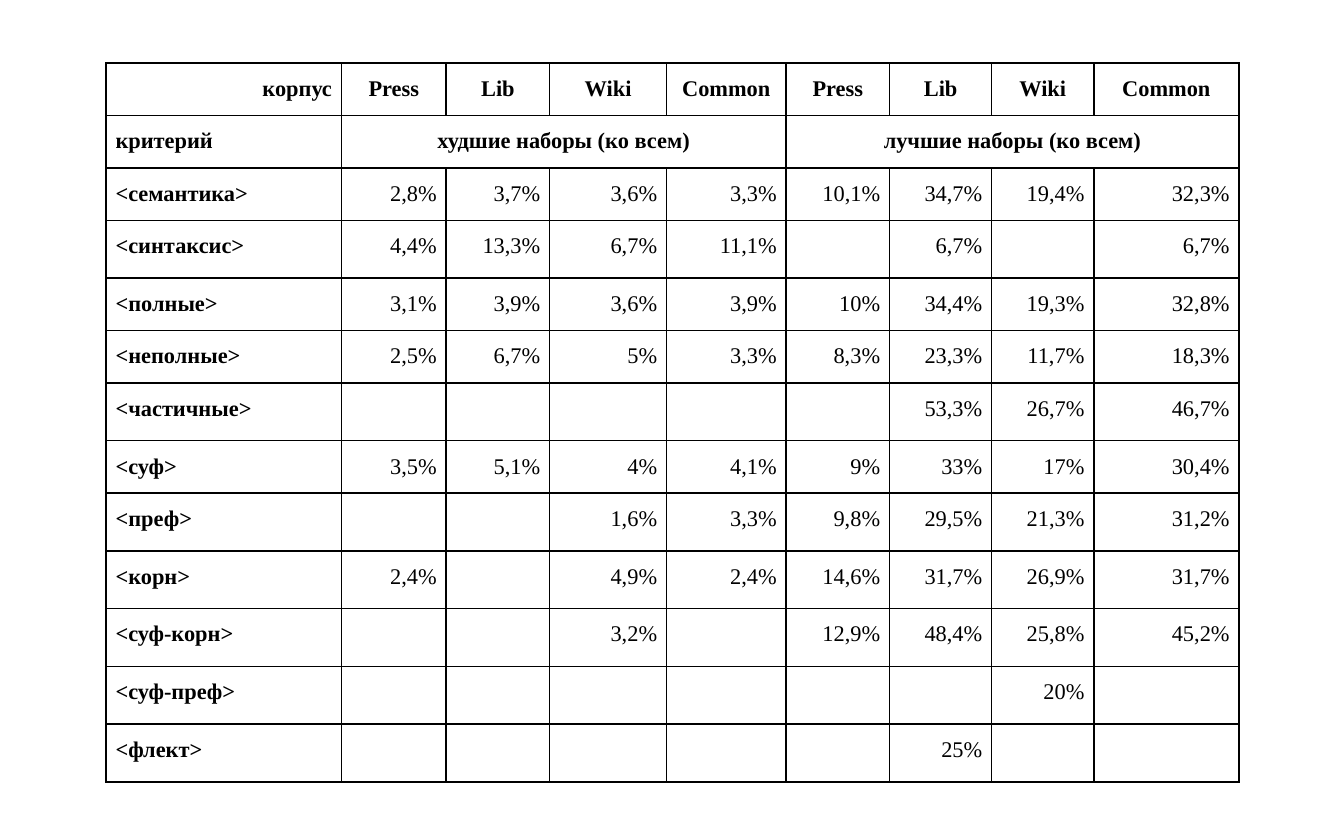
import dataclasses

import pptx
import pptx.enum.text
import pptx.oxml
import pptx.oxml.ns
import pptx.table
import pptx.util
from pptx.util import Inches

ALIGN = pptx.enum.text.PP_ALIGN
COLORS = {"ink": "000000"}
FONT = "Times New Roman"
LEFT, TOP = 0.79, 0.47
WIDTHS = [1.75, 0.78, 0.77, 0.87, 0.89, 0.77, 0.76, 0.76, 1.08]
SHORT, TALL = 0.39, 0.43
CORPORA = ["Press", "Lib", "Wiki", "Common"]
GROUPS = ["худшие наборы (ко всем)", "лучшие наборы (ко всем)"]


@dataclasses.dataclass
class Row:
    name: str
    values: list[str]
    slanted: bool = False  # opening bracket in italics

    @property
    def height(self) -> float:
        return SHORT if all(self.values) else TALL


ROWS = [
    Row("семантика", ["2,8%", "3,7%", "3,6%", "3,3%", "10,1%", "34,7%", "19,4%", "32,3%"]),
    Row("синтаксис", ["4,4%", "13,3%", "6,7%", "11,1%", "", "6,7%", "", "6,7%"]),
    Row("полные", ["3,1%", "3,9%", "3,6%", "3,9%", "10%", "34,4%", "19,3%", "32,8%"], True),
    Row("неполные", ["2,5%", "6,7%", "5%", "3,3%", "8,3%", "23,3%", "11,7%", "18,3%"], True),
    Row("частичные", ["", "", "", "", "", "53,3%", "26,7%", "46,7%"], True),
    Row("суф", ["3,5%", "5,1%", "4%", "4,1%", "9%", "33%", "17%", "30,4%"], True),
    Row("преф", ["", "", "1,6%", "3,3%", "9,8%", "29,5%", "21,3%", "31,2%"], True),
    Row("корн", ["2,4%", "", "4,9%", "2,4%", "14,6%", "31,7%", "26,9%", "31,7%"], True),
    Row("суф-корн", ["", "", "3,2%", "", "12,9%", "48,4%", "25,8%", "45,2%"]),
    Row("суф-преф", ["", "", "", "", "", "", "20%", ""]),
    Row("флект", ["", "", "", "", "", "25%", "", ""]),
]


def frame_cell(cell: pptx.table._Cell) -> None:
    """Give a cell thin borders and no fill."""
    props = cell._tc.get_or_add_tcPr()
    for side in ("lnL", "lnR", "lnT", "lnB"):
        props.append(pptx.oxml.parse_xml(
            f'<a:{side} {pptx.oxml.ns.nsdecls("a")} w="{pptx.util.Pt(1)}"><a:solidFill>'
            f'<a:srgbClr val="{COLORS["ink"]}"/></a:solidFill></a:{side}>'))
    cell.fill.background()


def write_cell(cell: pptx.table._Cell, text: str, align: ALIGN,
               bold: bool = True, slanted: bool = False) -> None:
    """Write a cell; a slanted one sets its first letter in italics."""
    cell.margin_left = cell.margin_right = Inches(0.07)
    cell.margin_top = cell.margin_bottom = Inches(0.1)
    line = cell.text_frame.paragraphs[0]
    line.text = text[:1] if slanted else text
    line.alignment = align
    if slanted:
        line.runs[0].font.italic = True
        line.add_run().text = text[1:]
    for run in line.runs:
        run.font.name = FONT
        run.font.size = pptx.util.Pt(12)
        run.font.bold = bold
        run.font.color.rgb = pptx.dml.color.RGBColor.from_string(COLORS["ink"])


def add_grid(slide: pptx.slide.Slide) -> pptx.table.Table:
    """Add the empty framed table."""
    heights = [SHORT, SHORT] + [row.height for row in ROWS]
    grid = slide.shapes.add_table(
        len(heights), len(WIDTHS), Inches(LEFT), Inches(TOP),
        Inches(sum(WIDTHS)), Inches(sum(heights))).table
    grid.first_row = grid.horz_banding = False
    for col, width in zip(grid.columns, WIDTHS):
        col.width = Inches(width)
    for row, height in zip(grid.rows, heights):
        row.height = Inches(height)
    for cell in grid.iter_cells():
        frame_cell(cell)
    return grid


def main() -> None:
    deck = pptx.Presentation()
    deck.slide_width, deck.slide_height = Inches(10), Inches(6.25)
    grid = add_grid(deck.slides.add_slide(deck.slide_layouts[6]))

    # Header rows
    write_cell(grid.cell(0, 0), "корпус", ALIGN.RIGHT)
    write_cell(grid.cell(1, 0), "критерий", ALIGN.LEFT)
    for col, name in enumerate(CORPORA * len(GROUPS), 1):
        write_cell(grid.cell(0, col), name, ALIGN.CENTER)
    for index, title in enumerate(GROUPS):
        first = 1 + index * len(CORPORA)
        head = grid.cell(1, first)
        head.merge(grid.cell(1, first + len(CORPORA) - 1))
        write_cell(head, title, ALIGN.CENTER)

    # Criteria and their shares
    for index, row in enumerate(ROWS, 2):
        write_cell(grid.cell(index, 0), f"<{row.name}>", ALIGN.LEFT, slanted=row.slanted)
        for col, value in enumerate(row.values, 1):
            if value:
                write_cell(grid.cell(index, col), value, ALIGN.RIGHT, bold=False)

    deck.save("out.pptx")


if __name__ == "__main__":
    main()
